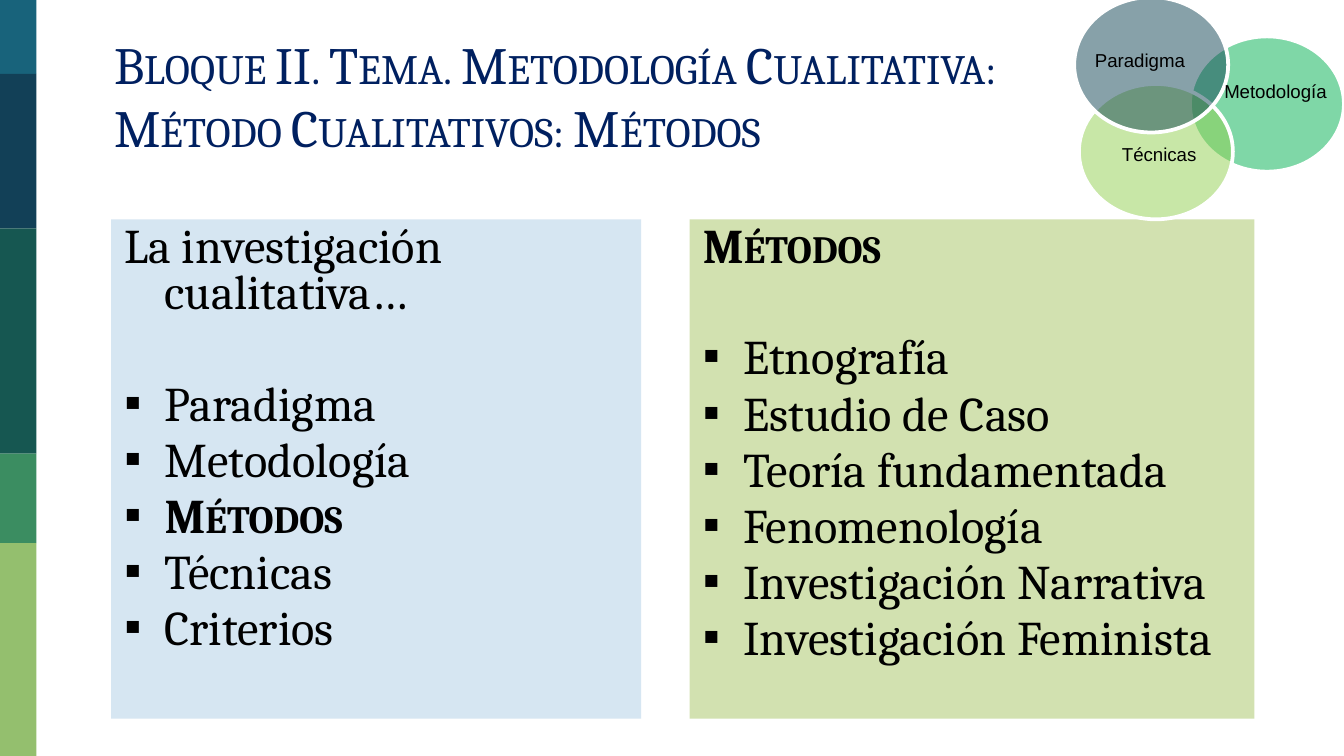
import pptx
import pptx.util
import pptx.dml.color
import pptx.enum.shapes
import pptx.enum.text
import pptx.oxml.ns
import lxml.etree

Pt = pptx.util.Pt
RGB = pptx.dml.color.RGBColor.from_string
SHAPE = pptx.enum.shapes.MSO_SHAPE
ALIGN = pptx.enum.text.PP_ALIGN
ANCHOR = pptx.enum.text.MSO_ANCHOR
qn = pptx.oxml.ns.qn

COLORS = {
    "black": "000000", "white": "FFFFFF", "navy": "002060",
    "bar_teal": "18637B", "bar_blue": "124057", "bar_pine": "165751",
    "bar_green": "3B8D61", "bar_lime": "94BF6E",
    "pale_blue": "D6E6F2", "pale_green": "D2E1B0",
    "green": "00B050", "lime": "92D050", "petrol": "114454",
}

presentation = pptx.Presentation()
presentation.slide_width, presentation.slide_height = Pt(720), Pt(405)
slide = presentation.slides.add_slide(presentation.slide_layouts[6])


def add_filled(kind, left, top, width, height, color):
    shape = slide.shapes.add_shape(kind, Pt(left), Pt(top), Pt(width), Pt(height))
    shape.shadow.inherit = False
    shape.fill.solid()
    shape.fill.fore_color.rgb = RGB(COLORS[color])
    shape.line.fill.background()
    return shape


def add_words(paragraph, words, font_format, color="black", small_caps=False):
    run = paragraph.add_run()
    run.text = words
    for name, value in font_format.items():
        setattr(run.font, name, value)
    run.font.color.rgb = RGB(COLORS[color])
    if small_caps:
        run.font._element.set("cap", "small")


# Side bar
for top, bottom, color in [
    (0, 39.6, "bar_teal"), (39.6, 122.4, "bar_blue"), (122.4, 243, "bar_pine"),
    (243, 291, "bar_green"), (291, 405, "bar_lime"),
]:
    add_filled(SHAPE.RECTANGLE, 0, top, 19.5, bottom - top, color)

# Title
title = slide.shapes.add_textbox(Pt(54), Pt(10), Pt(538.5), Pt(41)).text_frame
title_frame_format = {
    "word_wrap": True, "margin_left": Pt(7.2), "margin_right": Pt(7.2),
    "margin_top": Pt(7.2), "margin_bottom": Pt(7.2),
}
for name, value in title_frame_format.items():
    setattr(title, name, value)
title.paragraphs[0].space_before = Pt(6)
add_words(
    title.paragraphs[0],
    "Bloque II. Tema. Metodología Cualitativa: Método Cualitativos: Métodos",
    {"name": "Cambria", "size": Pt(28)}, "navy", small_caps=True,
)

# Two panels: a heading, then a bulleted list
panels = [
    (59.5, 284, "pale_blue", "La investigación cualitativa…",
     ["Paradigma", "Metodología", "Métodos", "Técnicas", "Criterios"]),
    (369.5, 302.5, "pale_green", "Métodos",
     ["Etnografía", "Estudio de Caso", "Teoría fundamentada", "Fenomenología",
      "Investigación Narrativa", "Investigación Feminista"]),
]
for left, width, color, heading, items in panels:
    panel = add_filled(SHAPE.RECTANGLE, left, 117.5, width, 267.5, color).text_frame
    panel.word_wrap = True
    panel.vertical_anchor = ANCHOR.TOP
    for index, words in enumerate([heading] + items):
        paragraph = panel.paragraphs[0] if index == 0 else panel.add_paragraph()
        paragraph_format = {
            "alignment": ALIGN.LEFT, "line_spacing": 0.8,
            "space_before": Pt(35 if index == 1 else 5.2),
        }
        for name, value in paragraph_format.items():
            setattr(paragraph, name, value)
        properties = paragraph._p.get_or_add_pPr()
        properties.set("marL", str(Pt(21.6)))
        properties.set("indent", str(Pt(-21.6)))
        if index > 0:
            lxml.etree.SubElement(properties, qn("a:buFont")).set("typeface", "Arial")
            lxml.etree.SubElement(properties, qn("a:buChar")).set("char", "▪")
        highlighted = words == "Métodos"
        add_words(
            paragraph, words,
            {"name": "Cambria", "size": Pt(25.9), "bold": highlighted},
            small_caps=highlighted,
        )

# Overlapping translucent circles
for left, top, color in [(637.5, 19.5, "green"), (578, 45, "lime"), (575.5, -1.5, "petrol")]:
    circle = add_filled(SHAPE.OVAL, left, top, 82.5, 72.5, color)
    circle.line.color.rgb = RGB(COLORS["white"])
    circle.line.width = Pt(2)
    fill_color = circle.fill._xPr.find(qn("a:solidFill"))[0]
    lxml.etree.SubElement(fill_color, qn("a:alpha")).set("val", "50000")

for words, left, top, width, alignment in [
    ("Paradigma", 579.5, 22.5, 75.5, ALIGN.LEFT),
    ("Metodología", 646.5, 39, 73.5, ALIGN.CENTER),
    ("Técnicas", 594, 73, 60.5, ALIGN.LEFT),
]:
    label = slide.shapes.add_textbox(Pt(left), Pt(top), Pt(width), Pt(19.5)).text_frame
    label.word_wrap = True
    label.paragraphs[0].alignment = alignment
    add_words(label.paragraphs[0], words, {"name": "Arial", "size": Pt(10)})

presentation.save("out.pptx")
